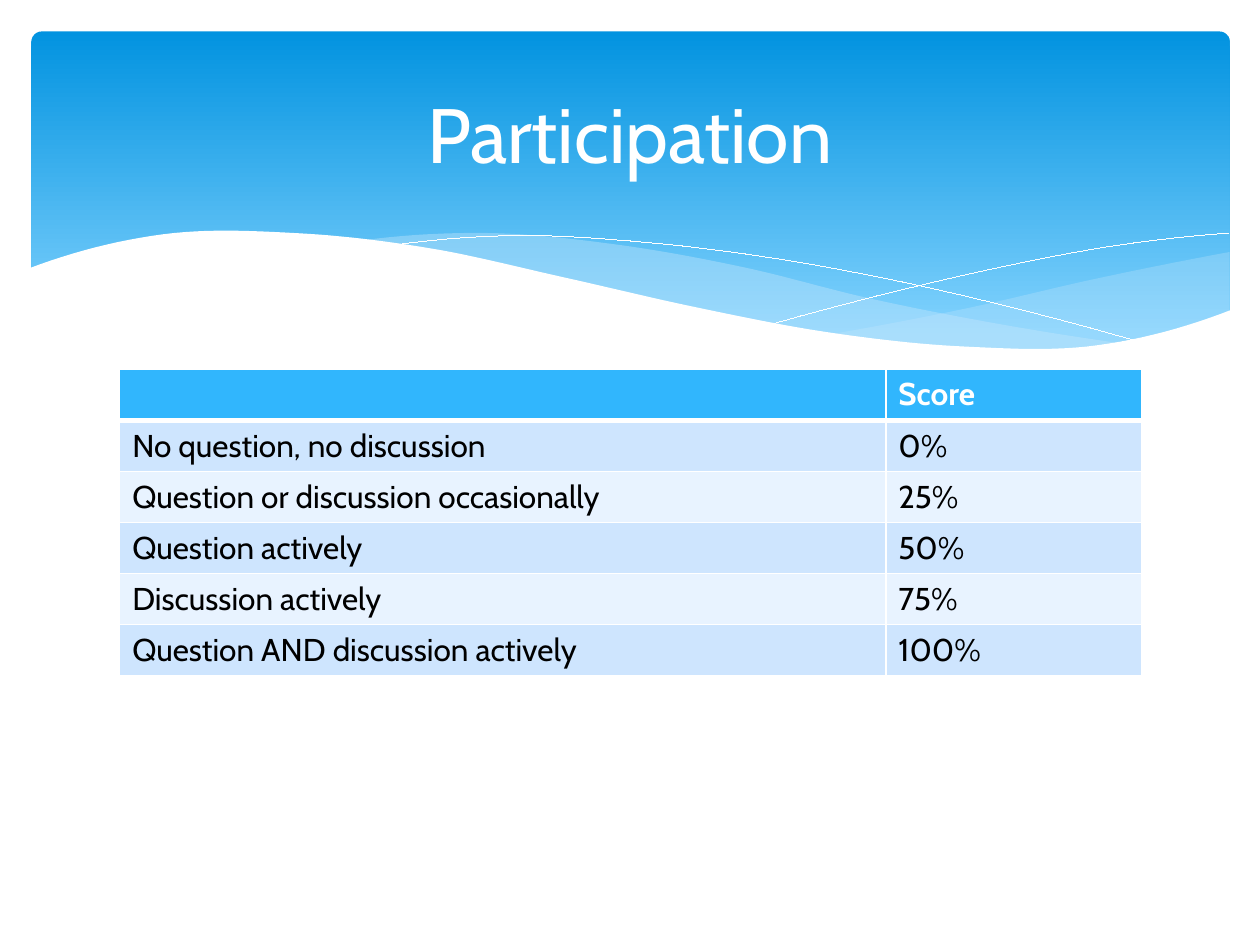
"""Build the Participation slide: a wave banner above a score table."""
from lxml.etree import SubElement
from pptx import Presentation
from pptx.dml.color import RGBColor
from pptx.enum.shapes import MSO_SHAPE
from pptx.enum.text import MSO_ANCHOR, PP_ALIGN
from pptx.oxml.ns import qn
from pptx.util import Inches, Pt

WHITE = RGBColor(0xFF, 0xFF, 0xFF)
BLACK = RGBColor(0x00, 0x00, 0x00)
BANNER_TOP = RGBColor(0x02, 0x93, 0xE0)
BANNER_BOTTOM = RGBColor(0x83, 0xD3, 0xFE)
WAVE_BLUE = RGBColor(0xC6, 0xE7, 0xFC)
HEADER_BLUE = RGBColor(0x31, 0xB6, 0xFD)
BAND_DARK = RGBColor(0xCE, 0xE5, 0xFE)
BAND_LIGHT = RGBColor(0xE8, 0xF3, 0xFF)

STEPS_PER_SPAN = 12
FONT_NAME = "Cabin"
WAVES = [
    dict(left=6.61, right=9.76, fill=WAVE_BLUE, opacity=29,
         crest=[2.65, 2.45, 2.21, 2], base=[2.65, 2.77, 2.74, 2.47]),
    dict(left=2.86, right=8.93, fill=WAVE_BLUE, opacity=40,
         crest=[1.91, 1.85, 1.94, 2.12, 2.37, 2.57, 2.73],
         base=[1.91, 2.08, 2.31, 2.53, 2.7, 2.78, 2.73]),
    dict(left=3.09, right=9.07, crest=[1.95, 1.87, 1.92, 2.04, 2.22, 2.45, 2.72]),
    dict(left=6.13, right=9.75, crest=[2.57, 2.33, 2.12, 1.95, 1.85]),
    dict(left=0.23, right=9.77, fill=WHITE, base=[3.29, 3.29, 3.29],
         crest=[2.13, 1.86, 1.85, 1.97, 2.2, 2.44, 2.64, 2.75, 2.74, 2.46]),
]
SCORES = [
    ("", "Score"),
    ("No question, no discussion", "0%"),
    ("Question or discussion occasionally", "25%"),
    ("Question actively", "50%"),
    ("Discussion actively", "75%"),
    ("Question AND discussion actively", "100%"),
]


def write_text(text_frame, text, size=18, color=BLACK, bold=False, align=PP_ALIGN.LEFT):
    """Write one formatted run into the first paragraph."""
    paragraph = text_frame.paragraphs[0]
    paragraph.alignment = align
    paragraph.font.size = Pt(size)
    if text:
        run = paragraph.add_run()
        run.text = text
        run.font.name = FONT_NAME
        run.font.size = Pt(size)
        run.font.bold = bold
        run.font.color.rgb = color


def smooth_edge(left, right, heights):
    """Return points of a Catmull-Rom curve through evenly spaced heights."""
    before = 3 * heights[0] - 3 * heights[1] + heights[2]
    after = 3 * heights[-1] - 3 * heights[-2] + heights[-3]
    knots = [before, *heights, after]
    spans = len(heights) - 1
    points = []
    for step in range(spans * STEPS_PER_SPAN + 1):
        span = min(step // STEPS_PER_SPAN, spans - 1)
        t = step / STEPS_PER_SPAN - span
        previous, start, end, following = knots[span:span + 4]
        start_slope, end_slope = (end - previous) / 2, (following - start) / 2
        blend = t * t * (3 - 2 * t)
        y = (start + (end - start) * blend
             + start_slope * t * (1 - t) ** 2 - end_slope * t * t * (1 - t))
        x = left + (right - left) * (span + t) / spans
        points.append((Inches(x), Inches(y)))
    return points


presentation = Presentation()
presentation.slide_width = Inches(10)
presentation.slide_height = Inches(7.5)
slide = presentation.slides.add_slide(presentation.slide_layouts[5])

banner = slide.shapes.add_shape(
    MSO_SHAPE.ROUNDED_RECTANGLE, Inches(0.25), Inches(0.25), Inches(9.51), Inches(2.7))
banner.adjustments[0] = 0.03
banner.shadow.inherit = False
banner.line.fill.background()
banner.fill.gradient()
banner.fill.gradient_angle = 270
for stop, position, color in zip(
        banner.fill.gradient_stops, (0, 0.9), (BANNER_TOP, BANNER_BOTTOM)):
    stop.position = position
    stop.color.rgb = color

for wave in WAVES:
    is_filled = "fill" in wave
    outline = smooth_edge(wave["left"], wave["right"], wave["crest"])
    if is_filled:
        outline += reversed(smooth_edge(wave["left"], wave["right"], wave["base"]))
    builder = slide.shapes.build_freeform(*outline[0])
    builder.add_line_segments(outline[1:], close=is_filled)
    shape = builder.convert_to_shape()
    shape.shadow.inherit = False
    if is_filled:
        shape.fill.solid()
        shape.fill.fore_color.rgb = wave["fill"]
        shape.line.fill.background()
        fill_color = shape.element.spPr.find(qn("a:solidFill"))[0]
        SubElement(fill_color, qn("a:alpha"), val=str(wave.get("opacity", 100) * 1000))
    else:
        shape.fill.background()
        shape.line.color.rgb = WHITE
        shape.element.spPr.find(qn("a:ln")).set("w", "0")

title = slide.shapes.title
title.left, title.top = Inches(0.5), Inches(0.37)
title.width, title.height = Inches(9), Inches(1.37)
title.text_frame.vertical_anchor = MSO_ANCHOR.MIDDLE
write_text(title.text_frame, "Participation", size=44, color=WHITE, align=PP_ALIGN.CENTER)
title.element.getparent().append(title.element)

table = slide.shapes.add_table(
    len(SCORES), 2, Inches(0.95), Inches(2.93), Inches(8.1), Inches(2.43)).table
table.columns[0].width = Inches(6.08)
table.columns[1].width = Inches(2.03)
for row_index, texts in enumerate(SCORES):
    is_header = row_index == 0
    band = HEADER_BLUE if is_header else BAND_DARK if row_index % 2 else BAND_LIGHT
    for column_index, text in enumerate(texts):
        cell = table.cell(row_index, column_index)
        properties = cell._tc.get_or_add_tcPr()
        top_width, bottom_width = (3 if row_index == 1 else 1), (3 if is_header else 1)
        for side, width in zip("LRTB", (1, 1, top_width, bottom_width)):
            border = SubElement(properties, qn(f"a:ln{side}"), w=str(Pt(width)))
            SubElement(SubElement(border, qn("a:solidFill")), qn("a:srgbClr"), val=str(WHITE))
        cell.fill.solid()
        cell.fill.fore_color.rgb = band
        write_text(cell.text_frame, text, color=WHITE if is_header else BLACK, bold=is_header)

presentation.save("out.pptx")
